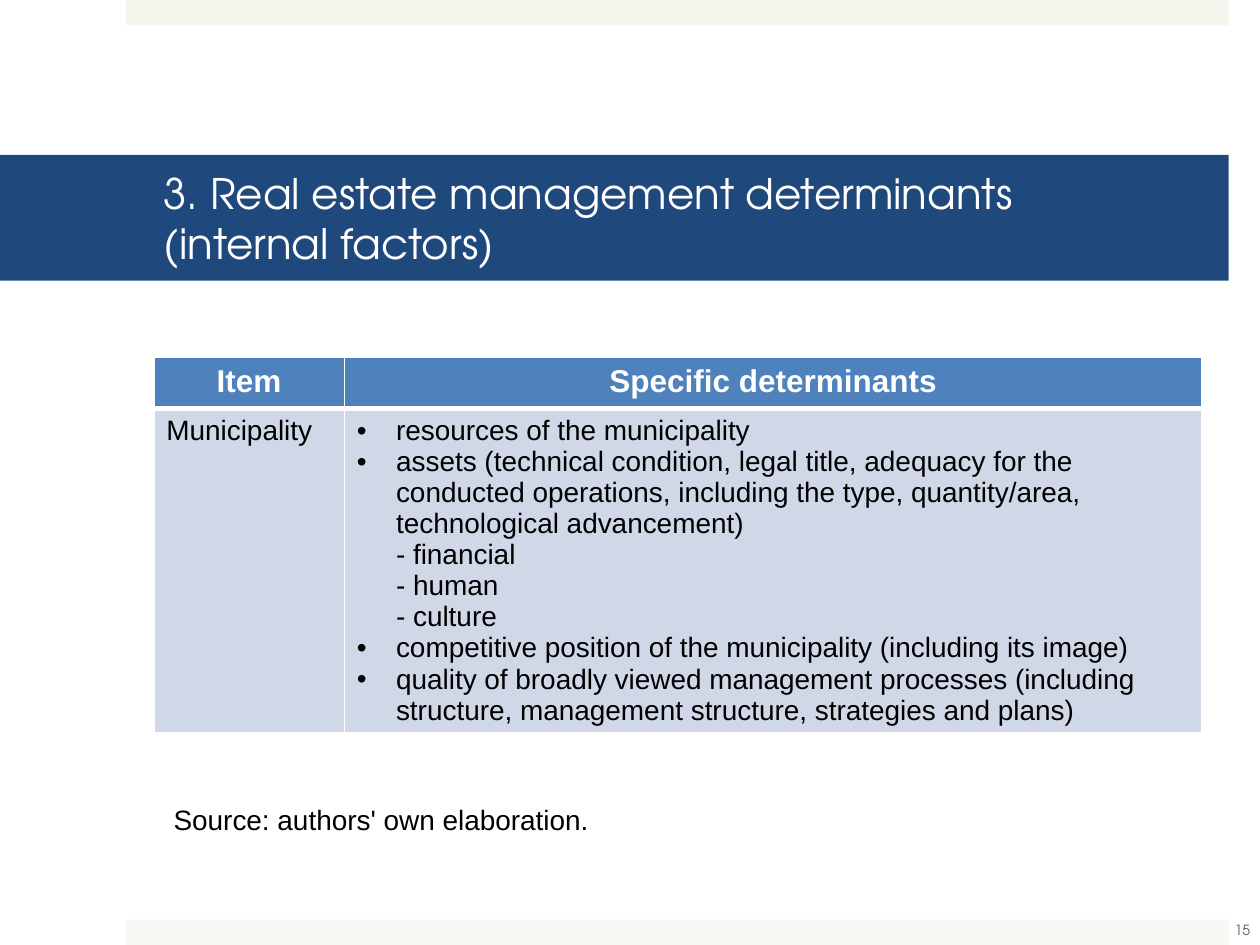
from lxml.etree import SubElement
from pptx import Presentation
from pptx.dml.color import RGBColor
from pptx.enum.shapes import MSO_SHAPE as Shape
from pptx.enum.text import MSO_ANCHOR as Anchor, MSO_AUTO_SIZE as AutoSize, PP_ALIGN as Align
from pptx.oxml.ns import qn
from pptx.util import Cm, Pt

BODY_FONT = "Arial"
DISPLAY_FONT = "TeX Gyre Adventor"
BULLET_INDENT = Cm(0.79)
DETERMINANTS = [
    ("•", "resources of the municipality"),
    ("•", "assets (technical condition, legal title, adequacy for the conducted operations, "
          "including the type, quantity/area, technological advancement)"),
    ("", "- financial"),
    ("", "- human"),
    ("", "- culture"),
    ("•", "competitive position of the municipality (including its image)"),
    ("•", "quality of broadly viewed management processes (including structure, "
          "management structure, strategies and plans)"),
]


def paint(target, color):
    """Give a shape or cell a solid fill."""
    target.fill.solid()
    target.fill.fore_color.rgb = RGBColor.from_string(color)


def style(paragraph, size, color, name=BODY_FONT, bold=False, align=Align.LEFT):
    """Set the font and alignment of a paragraph."""
    font = paragraph.font
    font.size, font.name, font.bold = Pt(size), name, bold
    font.color.rgb = RGBColor.from_string(color)
    paragraph.alignment = align


def set_insets(target, left, top, right, bottom):
    """Set the inner margins of a cell or text frame in centimetres."""
    target.margin_left, target.margin_top = Cm(left), Cm(top)
    target.margin_right, target.margin_bottom = Cm(right), Cm(bottom)


def set_borders(cell, top, bottom):
    """Draw white cell borders with the given top and bottom widths."""
    properties = cell._tc.get_or_add_tcPr()
    for side, width in (("L", 1), ("R", 1), ("T", top), ("B", bottom)):
        line = SubElement(properties, qn(f"a:ln{side}"), w=str(Pt(width)))
        SubElement(SubElement(line, qn("a:solidFill")), qn("a:srgbClr"), val="FFFFFF")


def indent(paragraph, bullet):
    """Indent a paragraph, hanging its bullet if it has one."""
    properties = paragraph._p.get_or_add_pPr()
    properties.set("marL", str(BULLET_INDENT))
    properties.set("indent", str(-BULLET_INDENT if bullet else 0))
    if bullet:
        SubElement(properties, qn("a:buFont"), typeface=BODY_FONT)
        SubElement(properties, qn("a:buChar"), char=bullet)


def add_band(slide, left, top, width, height, color):
    """Add a plain decorative band."""
    band = slide.shapes.add_shape(Shape.RECTANGLE, left, top, width, height)
    band.shadow.inherit = False
    paint(band, color)
    band.line.fill.background()


def place_title(slide, left, top, width, height):
    """Turn the title placeholder into the blue heading bar."""
    title = slide.shapes.title
    title.left, title.top, title.width, title.height = left, top, width, height
    paint(title, "1F497D")
    frame = title.text_frame
    frame.text = "3. Real estate management determinants \v(internal factors)"
    frame.auto_size, frame.vertical_anchor = AutoSize.NONE, Anchor.MIDDLE
    set_insets(frame, 3.3, 0.13, 0.76, 0.13)
    style(frame.paragraphs[0], 24, "FFFFFF", DISPLAY_FONT)


def add_determinants(slide, left, top, width, height):
    """Add the table of internal factors."""
    table = slide.shapes.add_table(2, 2, left, top, width, height).table
    item_width, header_height = Cm(3.84), Cm(1.03)
    table.columns[0].width, table.columns[1].width = item_width, width - item_width
    table.rows[0].height, table.rows[1].height = header_height, height - header_height

    for column, heading in enumerate(("Item", "Specific determinants")):
        header, body = table.cell(0, column), table.cell(1, column)
        set_borders(header, 1, 3)
        set_borders(body, 3, 1)
        paint(header, "4F81BD")
        paint(body, "D0D8E8")
        set_insets(header, 0.13, 0.03, 0.13, 0)
        header.text = heading
        paragraph = header.text_frame.paragraphs[0]
        style(paragraph, 18, "FFFFFF", bold=True, align=Align.CENTER)
        paragraph.line_spacing = 1.15

    municipality, details = table.cell(1, 0), table.cell(1, 1)
    municipality.text = "Municipality"
    style(municipality.text_frame.paragraphs[0], 16, "000000")
    details.text = "\n".join(text for _, text in DETERMINANTS)
    for paragraph, (bullet, _) in zip(details.text_frame.paragraphs, DETERMINANTS):
        style(paragraph, 16, "000000")
        indent(paragraph, bullet)


def add_label(slide, left, top, width, height, text, wrap, anchor, **font):
    """Add a one-line text box."""
    frame = slide.shapes.add_textbox(left, top, width, height).text_frame
    frame.text = text
    frame.word_wrap, frame.vertical_anchor = wrap, anchor
    style(frame.paragraphs[0], **font)


def main():
    """Build the slide and save it."""
    deck = Presentation()
    deck.slide_width, deck.slide_height = Cm(25.4), Cm(19.05)
    slide = deck.slides.add_slide(deck.slide_layouts[5])
    band_height = Cm(0.51)
    for top, color in ((0, "F5F4ED"), (deck.slide_height - band_height, "F8F7F3")):
        add_band(slide, Cm(2.54), top, Cm(22.23), band_height, color)
    place_title(slide, 0, Cm(3.12), Cm(24.77), Cm(2.54))
    add_determinants(slide, Cm(3.1), Cm(7.21), Cm(21.13), Cm(7.55))
    add_label(slide, Cm(3.25), Cm(16.05), Cm(9.15), Cm(0.94),
              "Source: authors' own elaboration.", False, Anchor.TOP,
              size=16, color="000000")
    add_label(slide, Cm(24.41), Cm(18.24), Cm(1.27), Cm(1.02),
              "15", True, Anchor.MIDDLE,
              size=8, color="595959", name=DISPLAY_FONT, align=Align.CENTER)
    deck.save("out.pptx")


if __name__ == "__main__":
    main()
